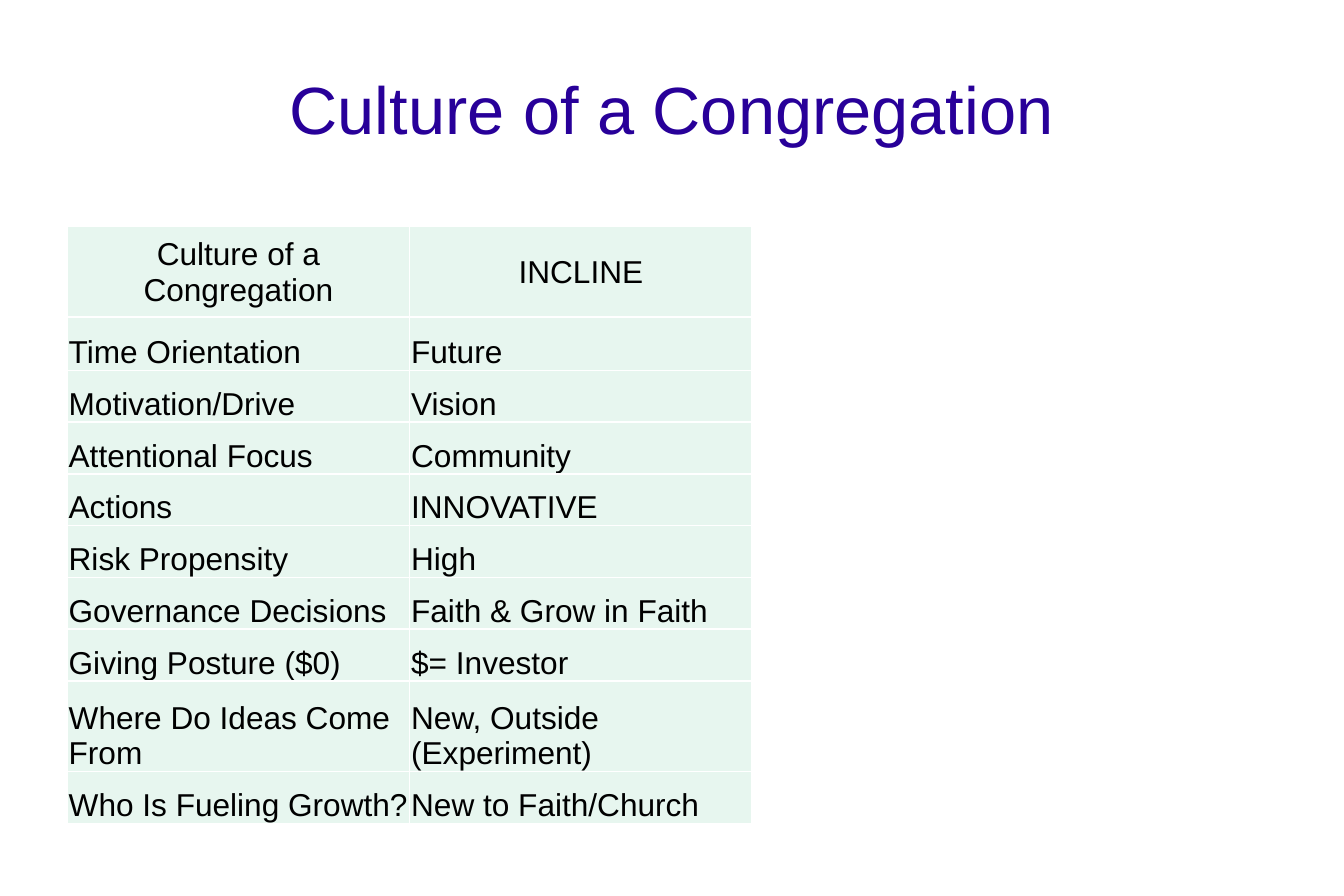
from dataclasses import dataclass

from lxml import etree
from pptx import Presentation
from pptx import util as u
from pptx.dml import color
from pptx.enum import text
from pptx.oxml import ns


@dataclass(frozen=True)
class Theme:
    font: str = "Arial"
    title_size: int = 38
    cell_size: int = 18
    title_color: str = "280099"
    text_color: str = "000000"
    cell_fill: str = "E7F6EF"
    border_color: str = "FFFFFF"


THEME = Theme()
LEFT = 1.35
COLUMN_WIDTH = 6.88
HEADER_HEIGHT = 1.82
FIRST_ROW_HEIGHT = 1.07
ROW_HEIGHT = 1.04

CULTURE_ROWS = [
    ("Culture of a Congregation", "INCLINE"),
    ("Time Orientation", "Future"),
    ("Motivation/Drive", "Vision"),
    ("Attentional Focus", "Community"),
    ("Actions", "INNOVATIVE"),
    ("Risk Propensity", "High"),
    ("Governance Decisions", "Faith & Grow in Faith"),
    ("Giving Posture ($0)", "$= Investor"),
    ("Where Do Ideas Come From", "New, Outside (Experiment)"),
    ("Who Is Fueling Growth?", "New to Faith/Church"),
]
ROW_HEIGHTS = [HEADER_HEIGHT, FIRST_ROW_HEIGHT] + [ROW_HEIGHT] * 6 + [HEADER_HEIGHT, ROW_HEIGHT]


def format_paragraph(paragraph, size, rgb, alignment):
    paragraph.alignment = alignment
    for run in paragraph.runs:
        run.font.name = THEME.font
        run.font.size = u.Pt(size)
        run.font.bold = False
        run.font.color.rgb = color.RGBColor.from_string(rgb)


def add_title(slide, wording):
    shape = slide.shapes.add_textbox(u.Cm(LEFT), u.Cm(0.71), u.Cm(24.3), u.Cm(3))
    frame = shape.text_frame
    frame.word_wrap = True
    frame.vertical_anchor = text.MSO_ANCHOR.MIDDLE
    frame.margin_left = frame.margin_right = frame.margin_bottom = 0
    frame.margin_top = u.Cm(0.1)
    frame.text = wording
    paragraph = frame.paragraphs[0]
    paragraph.line_spacing = 0.93
    format_paragraph(paragraph, THEME.title_size, THEME.title_color, text.PP_ALIGN.CENTER)


def add_borders(cell):
    properties = cell._tc.get_or_add_tcPr()
    for side in ("lnL", "lnR", "lnT", "lnB"):
        line = etree.SubElement(properties, ns.qn(f"a:{side}"), w=str(u.Pt(1)))
        fill = etree.SubElement(line, ns.qn("a:solidFill"))
        etree.SubElement(fill, ns.qn("a:srgbClr"), val=THEME.border_color)


def fill_cell(cell, wording, is_header):
    cell.text_frame.text = wording
    cell.margin_left = cell.margin_right = cell.margin_top = u.Cm(0.03)
    cell.margin_bottom = 0
    cell.vertical_anchor = text.MSO_ANCHOR.MIDDLE if is_header else text.MSO_ANCHOR.BOTTOM
    alignment = text.PP_ALIGN.CENTER if is_header else text.PP_ALIGN.LEFT
    format_paragraph(cell.text_frame.paragraphs[0], THEME.cell_size, THEME.text_color, alignment)
    add_borders(cell)
    cell.fill.solid()
    cell.fill.fore_color.rgb = color.RGBColor.from_string(THEME.cell_fill)


def add_culture_table(slide, rows):
    frame = slide.shapes.add_table(
        len(rows), 2, u.Cm(LEFT), u.Cm(4.55), u.Cm(2 * COLUMN_WIDTH), u.Cm(sum(ROW_HEIGHTS))
    )
    table = frame.table
    table.first_row = table.horz_banding = False
    for column in table.columns:
        column.width = u.Cm(COLUMN_WIDTH)
    for row_index, (row, height) in enumerate(zip(table.rows, ROW_HEIGHTS)):
        row.height = u.Cm(height)
        for cell, wording in zip(row.cells, rows[row_index]):
            fill_cell(cell, wording, row_index == 0)


def main():
    presentation = Presentation()
    presentation.slide_width = u.Cm(27)
    presentation.slide_height = u.Cm(18)
    slide = presentation.slides.add_slide(presentation.slide_layouts[6])
    add_title(slide, "Culture of a Congregation")
    add_culture_table(slide, CULTURE_ROWS)
    presentation.save("out.pptx")


if __name__ == "__main__":
    main()
